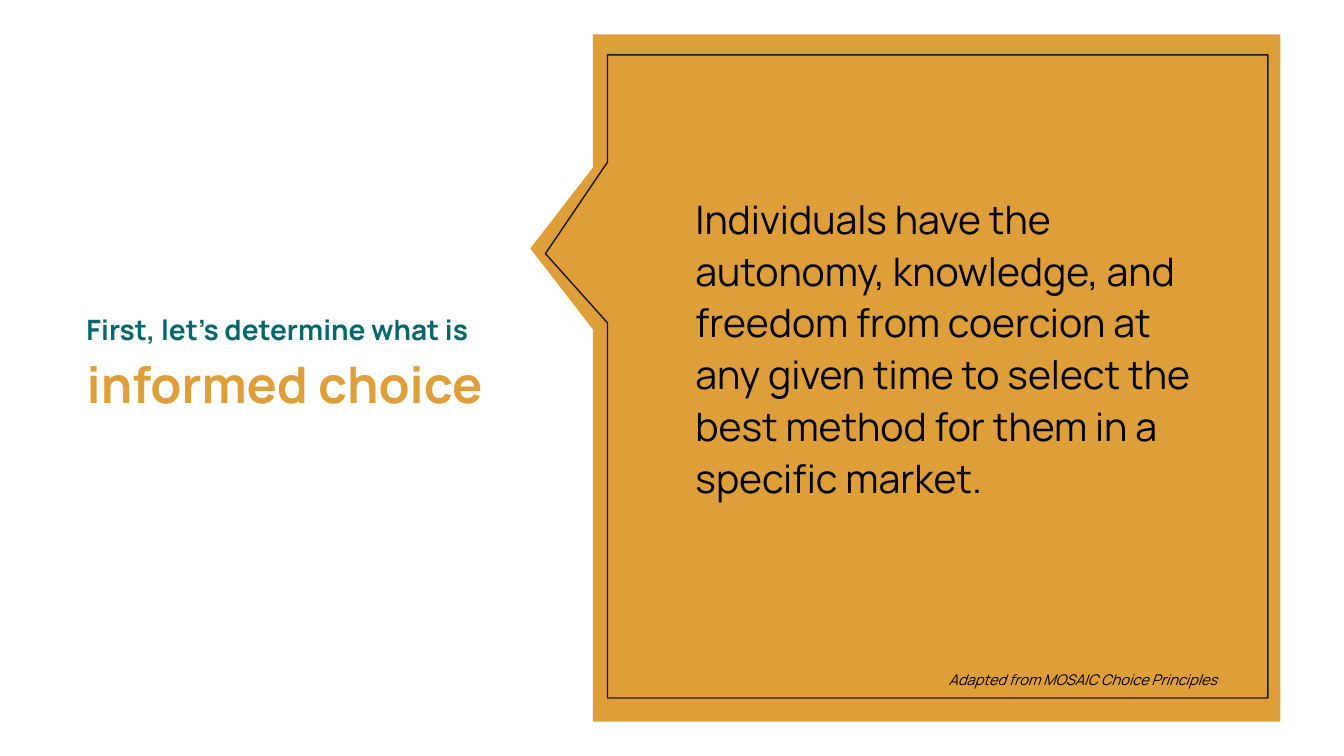
from dataclasses import dataclass
from typing import Optional

from pptx import Presentation
from pptx.dml.color import RGBColor
from pptx.enum.shapes import MSO_SHAPE
from pptx.enum.text import MSO_ANCHOR
from pptx.util import Inches, Pt

GOLD = RGBColor(0xDE, 0x9F, 0x3B)
TEAL = RGBColor(0x05, 0x67, 0x6D)
BLACK = RGBColor(0x00, 0x00, 0x00)
OUTLINE = RGBColor(0x18, 0x17, 0x17)
FONT = "Manrope"


@dataclass(frozen=True)
class Box:
    left: float
    top: float
    width: float
    height: float

    def lengths(self) -> tuple:
        return tuple(Inches(v) for v in (self.left, self.top, self.width, self.height))


@dataclass(frozen=True)
class Panel:
    kind: MSO_SHAPE
    box: Box
    rotation: float = 0
    adjustments: tuple = ()
    fill: Optional[RGBColor] = None
    line: Optional[RGBColor] = None


PANELS = (
    Panel(MSO_SHAPE.ISOSCELES_TRIANGLE, Box(4.65, 2.08, 1.99, 0.77), rotation=270, fill=GOLD),
    Panel(MSO_SHAPE.RECTANGLE, Box(5.88, 0.34, 6.82, 6.82), fill=GOLD),
    Panel(MSO_SHAPE.RECTANGULAR_CALLOUT, Box(6.11, 0.46, 6.38, 6.55), rotation=90,
          adjustments=(-0.191, 0.594), line=OUTLINE),
)


def add_panel(slide, panel: Panel) -> None:
    shape = slide.shapes.add_shape(panel.kind, *panel.box.lengths())
    shape.shadow.inherit = False
    shape.rotation = panel.rotation
    for index, value in enumerate(panel.adjustments):
        shape.adjustments[index] = value
    if panel.fill is None:
        shape.fill.background()
    else:
        shape.fill.solid()
        shape.fill.fore_color.rgb = panel.fill
    if panel.line is None:
        shape.line.fill.background()
    else:
        shape.line.color.rgb = panel.line
        shape.line.width = Pt(1)


def add_text(slide, text: str, box: Box, *, size: float, color: RGBColor = BLACK,
             bold: bool = False, italic: bool = False, line_spacing: float = 1.0,
             space_after: float = 0, anchor: MSO_ANCHOR = MSO_ANCHOR.TOP,
             left_inset: float = 0.1) -> None:
    frame = slide.shapes.add_textbox(*box.lengths()).text_frame
    frame.word_wrap = True
    frame.vertical_anchor = anchor
    frame.margin_left = Inches(left_inset)
    paragraph = frame.paragraphs[0]
    paragraph.line_spacing = line_spacing
    paragraph.space_after = Pt(space_after)
    run = paragraph.add_run()
    run.text = text
    run.font.name = FONT
    run.font.size = Pt(size)
    run.font.bold = bold
    run.font.italic = italic
    run.font.color.rgb = color


def main() -> None:
    presentation = Presentation()
    presentation.slide_width = Inches(13.33)
    presentation.slide_height = Inches(7.5)
    slide = presentation.slides.add_slide(presentation.slide_layouts[6])

    for panel in PANELS:
        add_panel(slide, panel)

    add_text(slide, "First, let’s determine what is", Box(0.76, 3.05, 4.36, 0.44),
             size=20, color=TEAL, bold=True)
    add_text(slide, "informed choice", Box(-0.02, 2.07, 6.95, 3.54), size=36, color=GOLD,
             bold=True, line_spacing=0.9, anchor=MSO_ANCHOR.MIDDLE, left_inset=0.88)
    add_text(slide, "Individuals have the autonomy, knowledge, and freedom from coercion "
             "at any given time to select the best method for them in a specific market.",
             Box(6.8, 1.84, 5.2, 3.72), size=28, line_spacing=1.1, space_after=6)
    add_text(slide, "Adapted from MOSAIC Choice Principles", Box(9.31, 6.61, 3.27, 0.28),
             size=10.5, italic=True)

    presentation.save("out.pptx")


if __name__ == "__main__":
    main()
